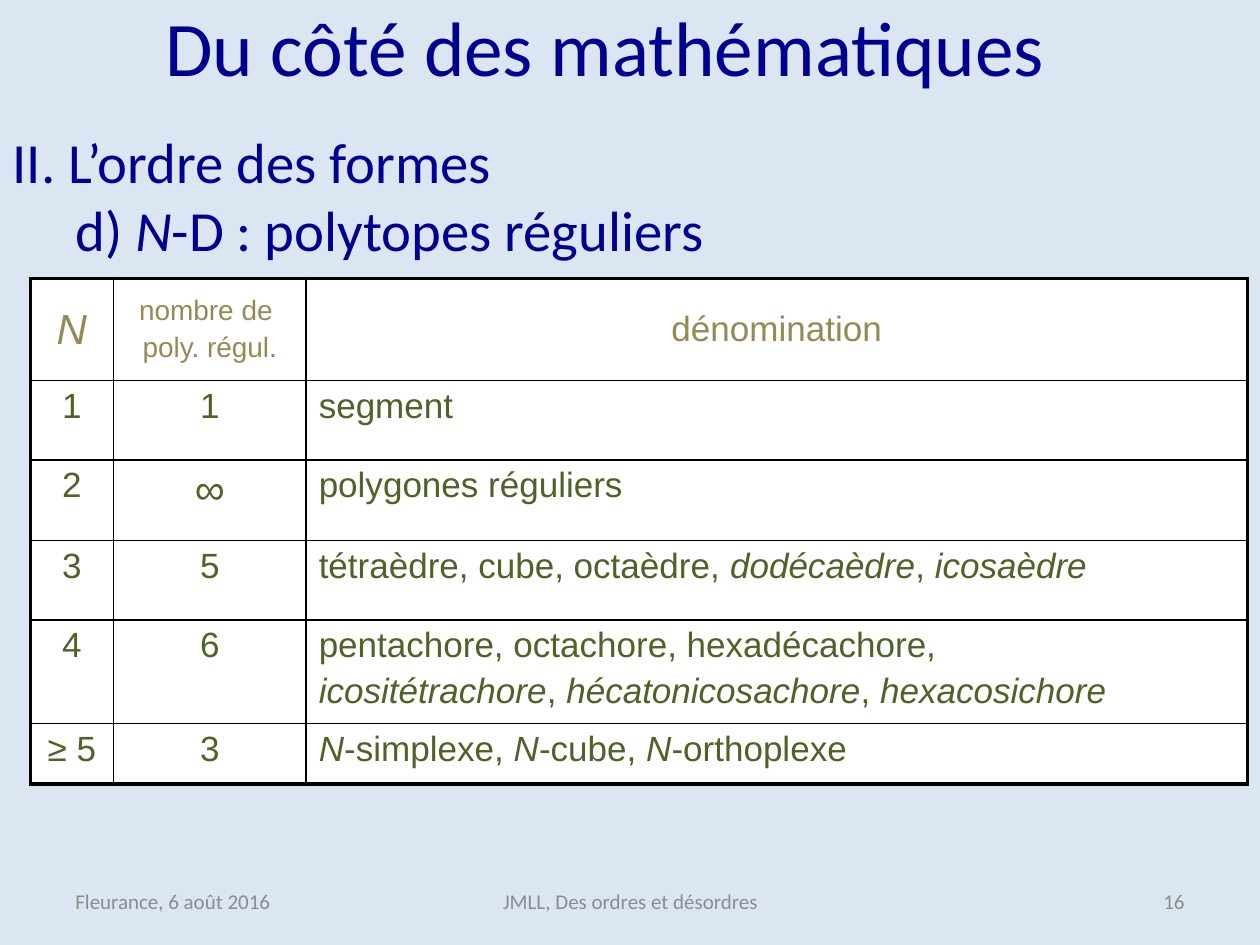
from lxml import etree
from pptx import Presentation
from pptx.dml.color import RGBColor
from pptx.enum.text import MSO_ANCHOR, MSO_AUTO_SIZE, PP_ALIGN
from pptx.oxml.ns import qn
from pptx.util import Inches, Pt

LEFT, CENTER, RIGHT = PP_ALIGN.LEFT, PP_ALIGN.CENTER, PP_ALIGN.RIGHT
TOP, MIDDLE, BOTTOM = MSO_ANCHOR.TOP, MSO_ANCHOR.MIDDLE, MSO_ANCHOR.BOTTOM
NO_AUTOFIT = MSO_AUTO_SIZE.NONE

PALE_BLUE = RGBColor(0xDC, 0xE6, 0xF2)
NAVY = RGBColor(0x00, 0x00, 0x90)
GRAY = RGBColor(0x8C, 0x8C, 0x8C)
TAN = RGBColor(0x94, 0x8A, 0x54)
GREEN = RGBColor(0x4F, 0x62, 0x28)
WHITE = RGBColor(0xFF, 0xFF, 0xFF)
BLACK = RGBColor(0x00, 0x00, 0x00)

TITLE_LAYOUT = 5
COLUMN = ROW = Inches(0.1)  # grid of 100 columns by 75 rows
THICK, THIN = Pt(2.25), Pt(1)

# Words between asterisks are italic
TITLE_LINES = [  # text, size, indent in columns, space before in points
    ("Du côté des mathématiques", 44.1, 12.1, 0),
    ("II. L’ordre des formes", 32.4, 0, 20),
    ("d) *N*-D : polytopes réguliers", 32.4, 5, 0),
]
FOOTERS = [
    ("Fleurance, 6 août 2016", 5, 23.3, LEFT),
    ("JMLL, Des ordres et désordres", 34.2, 31.7, CENTER),
    ("16", 71.7, 23.3, RIGHT),
]
TABLE_COLUMNS = [6.6, 15.3, 74.7]
TABLE_ROWS = [8.1, 6.3, 6.4, 6.3, 8.2, 4.8]
POLYTOPES = [
    ["*N*", "nombre de \npoly. régul.", "dénomination"],
    ["1", "1", "segment"],
    ["2", "∞", "polygones réguliers"],
    ["3", "5", "tétraèdre, cube, octaèdre, *dodécaèdre*, *icosaèdre*"],
    ["4", "6", "pentachore, octachore, hexadécachore,\n"
               "*icositétrachore*, *hécatonicosachore*, *hexacosichore*"],
    ["≥ 5", "3", "*N*-simplexe, *N*-cube, *N*-orthoplexe"],
]
HEADER_SIZES = [24, 16, 20]
BODY_SIZE, INFINITY_SIZE = 20, 24


class SlideBuilder:
    def __init__(self, slide):
        self.slide = slide
        self.heading_font = "Calibri"
        self.table_font = "Arial"
        fill = slide.background.fill
        fill.solid()
        fill.fore_color.rgb = PALE_BLUE

    def box(self, left, top, width, height):
        return (round(left * COLUMN), round(top * ROW),
                round(width * COLUMN), round(height * ROW))

    def add_runs(self, paragraph, text, font_name, size, color, align=LEFT):
        paragraph.alignment = align
        for index, part in enumerate(text.split("*")):
            if part:
                run = paragraph.add_run()
                run.text = part
                run.font.name = font_name
                run.font.size = Pt(size)
                run.font.color.rgb = color
                run.font.italic = index % 2 == 1

    def add_title(self, lines, left, top, width, height):
        shape = self.slide.shapes.title
        shape.left, shape.top, shape.width, shape.height = self.box(left, top, width, height)
        frame = shape.text_frame
        frame.auto_size = NO_AUTOFIT
        frame.word_wrap = True
        frame.vertical_anchor = BOTTOM
        frame.margin_top, frame.margin_bottom = 0, 4 * ROW
        for index, (text, size, indent, space) in enumerate(lines):
            paragraph = frame.add_paragraph() if index else frame.paragraphs[0]
            paragraph.space_before = Pt(space)
            paragraph_properties = paragraph._p.get_or_add_pPr()
            paragraph_properties.set("marL", str(round(indent * COLUMN)))
            paragraph_properties.set("indent", "0")
            self.add_runs(paragraph, text, self.heading_font, size, NAVY)

    def add_footer(self, text, left, width, align):
        shape = self.slide.shapes.add_textbox(*self.box(left, 69.5, width, 4))
        frame = shape.text_frame
        frame.word_wrap = True
        frame.vertical_anchor = MIDDLE
        self.add_runs(frame.paragraphs[0], text, self.heading_font, 12, GRAY, align)

    def add_table(self, rows, left, top):
        size = sum(TABLE_COLUMNS), sum(TABLE_ROWS)
        frame = self.slide.shapes.add_table(len(rows), len(TABLE_COLUMNS),
                                            *self.box(left, top, *size))
        table = frame.table
        for column, width in zip(table.columns, TABLE_COLUMNS):
            column.width = round(width * COLUMN)
        for row, height in zip(table.rows, TABLE_ROWS):
            row.height = round(height * ROW)
        last_row, last_column = len(rows) - 1, len(TABLE_COLUMNS) - 1
        for i, texts in enumerate(rows):
            for j, text in enumerate(texts):
                cell = table.cell(i, j)
                self.fill_cell(cell, text, i == 0, j)
                outer = {"lnL": j == 0, "lnR": j == last_column,
                         "lnT": i == 0, "lnB": i == last_row}
                self.set_borders(cell, outer)

    def fill_cell(self, cell, text, is_header, column):
        size = HEADER_SIZES[column] if is_header else BODY_SIZE
        if text == "∞":
            size = INFINITY_SIZE
        cell.fill.solid()
        cell.fill.fore_color.rgb = WHITE
        cell.vertical_anchor = MIDDLE if is_header else TOP
        align = CENTER if is_header or column < 2 else LEFT
        frame = cell.text_frame
        for index, line in enumerate(text.split("\n")):
            paragraph = frame.add_paragraph() if index else frame.paragraphs[0]
            if index:
                paragraph.space_before = Pt(0.2 * size)
            self.add_runs(paragraph, line, self.table_font, size,
                          TAN if is_header else GREEN, align)

    def set_borders(self, cell, outer):
        properties = cell._tc.get_or_add_tcPr()
        for position, (side, is_outer) in enumerate(outer.items()):
            line = etree.Element(qn(f"a:{side}"), w=str(THICK if is_outer else THIN))
            fill = etree.SubElement(line, qn("a:solidFill"))
            etree.SubElement(fill, qn("a:srgbClr"), val=str(BLACK))
            properties.insert(position, line)


def main():
    presentation = Presentation()
    presentation.slide_width, presentation.slide_height = 100 * COLUMN, 75 * ROW
    slide = presentation.slides.add_slide(presentation.slide_layouts[TITLE_LAYOUT])
    builder = SlideBuilder(slide)

    # Footer line
    for footer in FOOTERS:
        builder.add_footer(*footer)

    # Title with its outline, then the table of regular polytopes
    builder.add_title(TITLE_LINES, 0, 1.6, 100, 23.3)
    builder.add_table(POLYTOPES, 2.4, 22.1)

    presentation.save("out.pptx")


if __name__ == "__main__":
    main()
